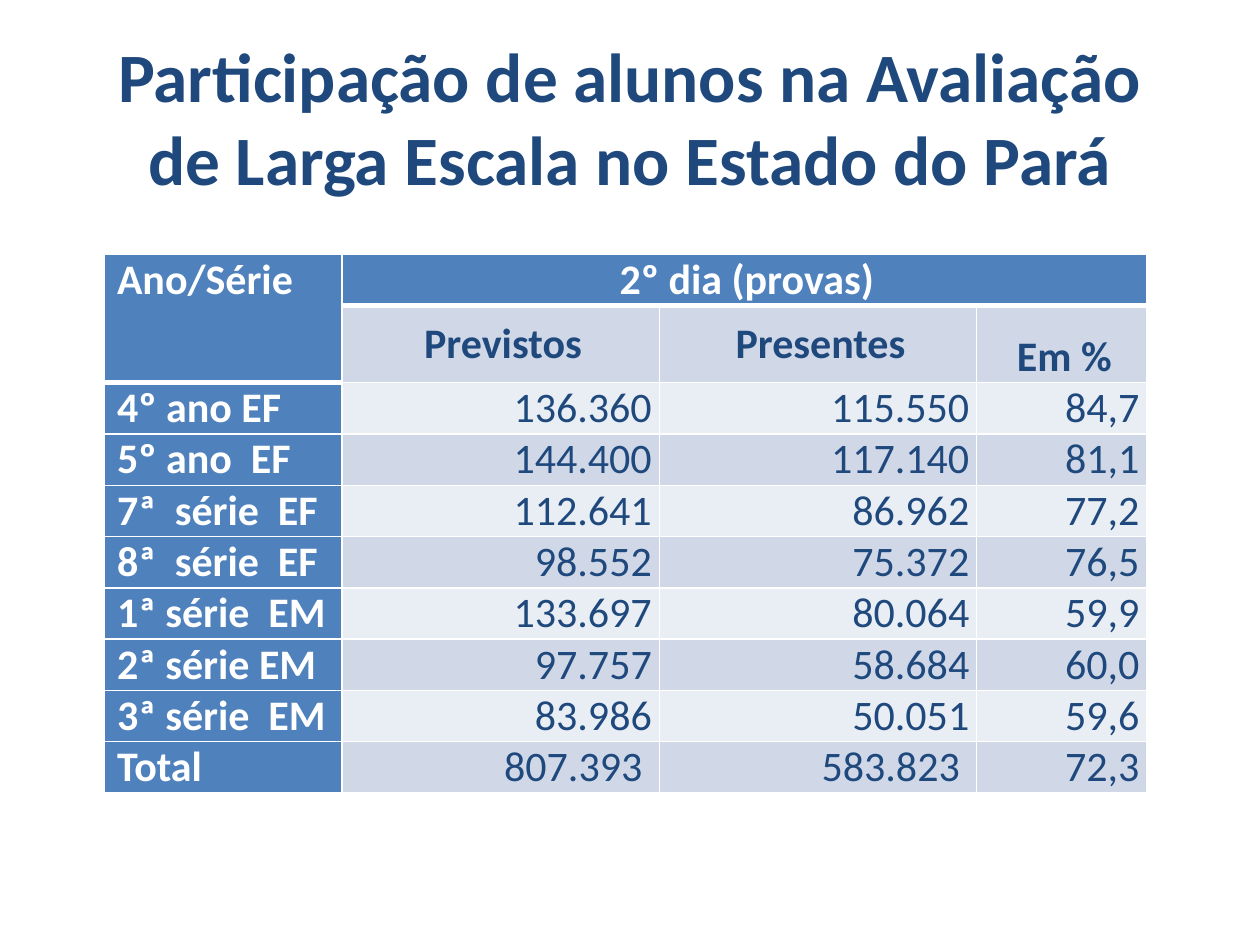
from dataclasses import dataclass

from lxml.etree import SubElement
from pptx import Presentation
from pptx.dml.color import RGBColor
from pptx.enum.text import MSO_ANCHOR as Anchor, PP_ALIGN as Align
from pptx.oxml.ns import qn
from pptx.slide import Slide
from pptx.table import Table, _Cell as Cell
from pptx.util import Cm, Pt

NAVY = RGBColor(0x1F, 0x49, 0x7D)
BLUE = RGBColor(0x4F, 0x81, 0xBD)
DARK_BAND = RGBColor(0xD0, 0xD8, 0xE8)
LIGHT_BAND = RGBColor(0xE9, 0xED, 0xF4)
WHITE = RGBColor(0xFF, 0xFF, 0xFF)
FONT = "Calibri"
COLUMN_WIDTHS = [4.78, 6.4, 6.4, 3.43]
ROW_HEIGHTS = [1.03, 1.55] + [1.03] * 8
THIN, THICK = 1, 3


@dataclass
class CellStyle:
    fill: RGBColor
    color: RGBColor
    bold: bool = False
    align: Align = Align.LEFT
    anchor: Anchor = Anchor.TOP
    line_spacing: float | None = None
    margin_right: float = 0.15


@dataclass
class GradeRow:
    grade: str
    expected: str
    present: str
    percent: str
    number_margin: float = 0.15


GRADES = [
    GradeRow("4º ano EF", "136.360", "115.550", "84,7"),
    GradeRow("5º ano  EF", "144.400", "117.140", "81,1"),
    GradeRow("7ª  série  EF", "112.641", "86.962", "77,2"),
    GradeRow("8ª  série  EF", "98.552", "75.372", "76,5"),
    GradeRow("1ª série  EM", "133.697", "80.064", "59,9"),
    GradeRow("2ª série EM", "97.757", "58.684", "60,0"),
    GradeRow("3ª série  EM", "83.986", "50.051", "59,6"),
    GradeRow("Total", "807.393", "583.823", "72,3", number_margin=0.34),
]


def set_borders(cell: Cell, top: float, bottom: float) -> None:
    properties = cell._tc.get_or_add_tcPr()
    widths = {"a:lnL": THIN, "a:lnR": THIN, "a:lnT": top, "a:lnB": bottom}
    for tag, width in widths.items():
        line = SubElement(properties, qn(tag), w=str(Pt(width)))
        fill = SubElement(line, qn("a:solidFill"))
        SubElement(fill, qn("a:srgbClr"), val=str(WHITE))


def write_cell(cell: Cell, text: str, style: CellStyle) -> None:
    cell.fill.solid()
    cell.fill.fore_color.rgb = style.fill
    cell.margin_left = Cm(0.25)
    cell.margin_right = Cm(style.margin_right)
    cell.margin_top = cell.margin_bottom = 0
    cell.vertical_anchor = style.anchor
    paragraph = cell.text_frame.paragraphs[0]
    paragraph.alignment = style.align
    if style.line_spacing:
        paragraph.line_spacing = style.line_spacing
    run = paragraph.add_run()
    run.text = text
    run.font.name = FONT
    run.font.size = Pt(24)
    run.font.bold = style.bold
    run.font.color.rgb = style.color


def add_title(slide: Slide, text: str) -> None:
    title = slide.shapes.title
    title.left, title.top = Cm(1.27), Cm(0.76)
    title.width, title.height = Cm(22.86), Cm(3.18)
    title.text_frame.vertical_anchor = Anchor.MIDDLE
    paragraph = title.text_frame.paragraphs[0]
    paragraph.alignment = Align.CENTER
    run = paragraph.add_run()
    run.text = text
    run.font.name = FONT
    run.font.size = Pt(39.6)
    run.font.bold = True
    run.font.color.rgb = NAVY


def add_grid(slide: Slide) -> Table:
    frame = slide.shapes.add_table(
        len(ROW_HEIGHTS), len(COLUMN_WIDTHS), Cm(2.11), Cm(5.13),
        Cm(sum(COLUMN_WIDTHS)), Cm(sum(ROW_HEIGHTS)))
    table = frame.table
    for column, width in zip(table.columns, COLUMN_WIDTHS):
        column.width = Cm(width)
    for row, height in zip(table.rows, ROW_HEIGHTS):
        row.height = Cm(height)
    for row_index, row in enumerate(table.rows):
        for column_index, cell in enumerate(row.cells):
            header_end = 1 if column_index == 0 else 0
            set_borders(cell,
                        THICK if row_index == header_end + 1 else THIN,
                        THICK if row_index == header_end else THIN)
    table.cell(0, 0).merge(table.cell(1, 0))
    table.cell(0, 1).merge(table.cell(0, 3))
    return table


def fill_headers(table: Table) -> None:
    write_cell(table.cell(0, 0), "Ano/Série", CellStyle(BLUE, WHITE, True))
    write_cell(table.cell(0, 1), "2º dia (provas)",
               CellStyle(BLUE, WHITE, True, Align.CENTER))
    headings = [("Previstos", None), ("Presentes", None), ("Em %", 1.5)]
    for column, (text, spacing) in enumerate(headings, start=1):
        write_cell(table.cell(1, column), text,
                   CellStyle(DARK_BAND, NAVY, True, Align.CENTER,
                             Anchor.MIDDLE, spacing))


def fill_grades(table: Table) -> None:
    for index, grade in enumerate(GRADES):
        row = index + 2
        band = DARK_BAND if index % 2 else LIGHT_BAND
        number = CellStyle(band, NAVY, False, Align.RIGHT, Anchor.BOTTOM,
                           margin_right=grade.number_margin)
        percent = CellStyle(band, NAVY, False, Align.RIGHT, Anchor.BOTTOM)
        write_cell(table.cell(row, 0), grade.grade,
                   CellStyle(BLUE, WHITE, True))
        write_cell(table.cell(row, 1), grade.expected, number)
        write_cell(table.cell(row, 2), grade.present, number)
        write_cell(table.cell(row, 3), grade.percent, percent)


def main() -> None:
    presentation = Presentation()
    presentation.slide_width, presentation.slide_height = Cm(25.4), Cm(19.05)
    slide = presentation.slides.add_slide(presentation.slide_layouts[5])
    add_title(slide, "Participação de alunos na Avaliação "
                     "de Larga Escala no Estado do Pará")
    table = add_grid(slide)
    fill_headers(table)
    fill_grades(table)
    presentation.save("out.pptx")


if __name__ == "__main__":
    main()
